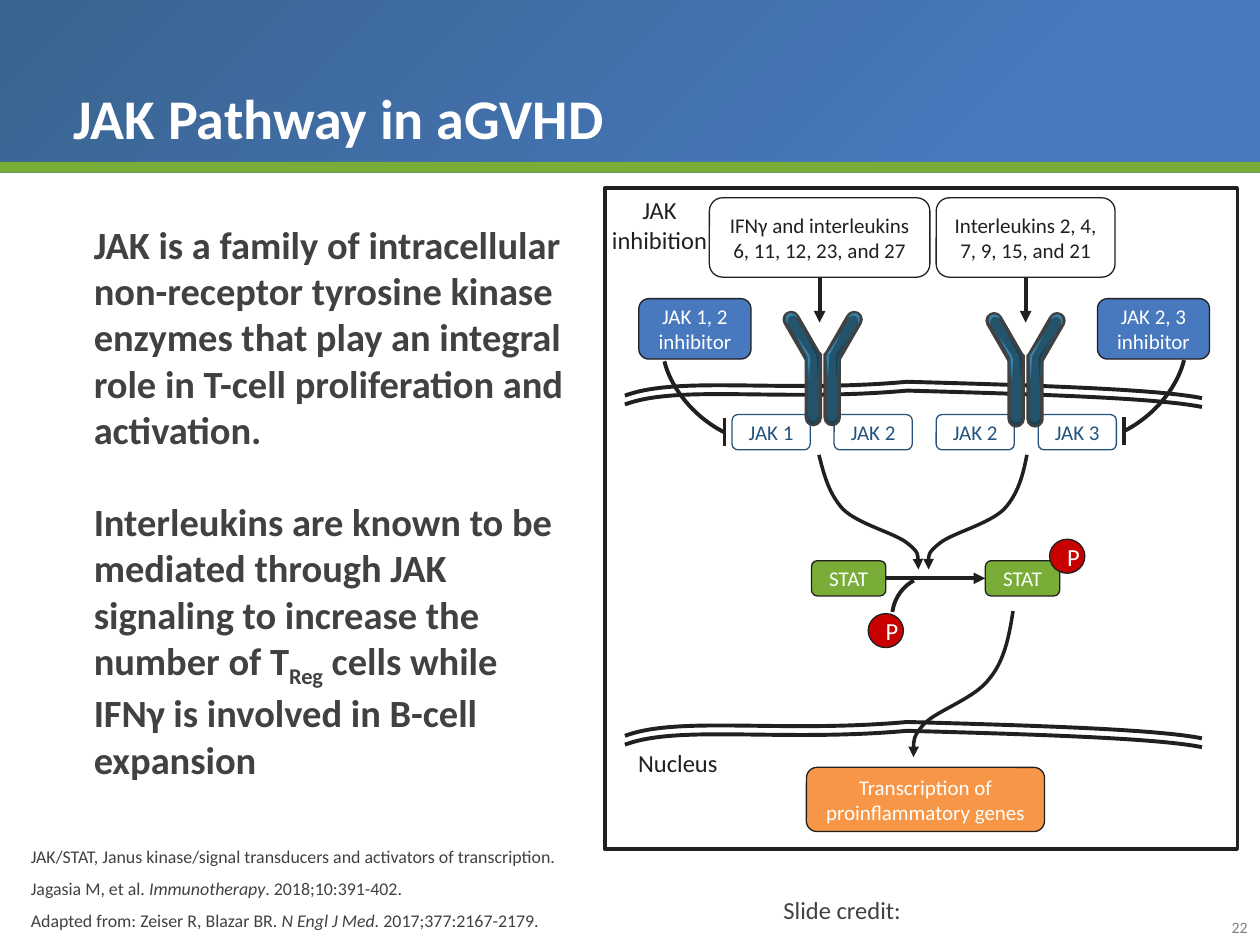
"""Build the slide on the JAK pathway in aGVHD."""
from lxml import etree
from pptx import Presentation
from pptx import util as u
from pptx.dml.color import RGBColor
from pptx.enum import shapes as s, text as t
from pptx.oxml import parse_xml
from pptx.oxml.ns import nsdecls, qn

HUES = dict(ink="202020", text="414141", white="FFFFFF", blue="4878BD", dusk="396490",
            navy="24537D", green="79AD38", orange="F79646", red="C80000", gray="7F7F7F",
            teal="24536C", light="3783AB", deep="1B4154")
K = s.MSO_SHAPE
A, P = t.MSO_ANCHOR, t.PP_ALIGN

deck = Presentation()
deck.slide_width, deck.slide_height = u.Inches(10), u.Inches(7.5)
unit = deck.slide_width // 1000
slide = deck.slides.add_slide(deck.slide_layouts[6])
art = slide.shapes


def form(host, kind, at, fill=None, line=None, width=0.75, adj=(), rot=0, flip=False):
    item = host.add_shape(kind, *(round(v * unit) for v in at))
    item.shadow.inherit = False
    item.rotation = rot
    for n, v in enumerate(adj):
        item.adjustments[n] = v
    if flip:
        item._element.spPr.find(qn("a:xfrm")).set("flipH", "1")
    for part, hue in ((item.fill, fill), (item.line.fill, line)):
        if hue:
            part.solid()
            part.fore_color.rgb = RGBColor.from_string(HUES[hue])
        else:
            part.background()
    if line:
        item.line.width = u.Pt(width)
    return item


def write(item, paras, size, hue, align=P.CENTER, anchor=A.MIDDLE, wrap=True, bold=False, **gaps):
    frame = item.text_frame
    frame.word_wrap, frame.vertical_anchor = wrap, anchor
    for n, runs in enumerate(paras):
        para = frame.add_paragraph() if n else frame.paragraphs[0]
        para.alignment = align
        for key, gap in gaps.items():
            if n or key != "space_before":
                setattr(para, key, gap)
        for word in [runs] if isinstance(runs, str) else runs:
            run = para.add_run()
            run.text, mark = word if isinstance(word, tuple) else (word, "")
            look = dict(name="Calibri", size=u.Pt(size), bold=bold, italic=mark == "italic")
            for key, v in look.items():
                setattr(run.font, key, v)
            run.font.color.rgb = RGBColor.from_string(HUES[hue])
            if mark == "sub":
                run.font._element.set("baseline", "-25000")


band = form(art, K.RECTANGLE, (0, 0, 1000, 137), "blue")
old = band._element.spPr.find(qn("a:solidFill"))
stops = "".join(f'<a:gs pos="{pos}"><a:srgbClr val="{HUES[hue]}"/></a:gs>'
                for pos, hue in ((0, "dusk"), (79000, "blue")))
old.getparent().replace(old, parse_xml(
    f'<a:gradFill {nsdecls("a")} rotWithShape="1"><a:gsLst>{stops}</a:gsLst><a:path path="circle">'
    '<a:fillToRect r="100000" b="100000"/></a:path></a:gradFill>'))
form(art, K.RECTANGLE, (0, 128.6, 1000, 8.6), "green")

left = dict(align=P.LEFT, anchor=A.TOP)
labels = [
    ((958, 723.4, 42, 25), ["22"], 9, "gray", dict(align=P.RIGHT, anchor=A.TOP)),
    ((612, 705.4, 114, 34), ["Slide credit:"], 14, "text", dict(left, wrap=False)),
    ((48.6, 10, 901, 115), ["JAK Pathway in aGVHD"], 32, "white",
     dict(align=P.LEFT, anchor=A.BOTTOM, bold=True, line_spacing=0.9)),
    ((14.6, 660, 465, 84), [
        "JAK/STAT, Janus kinase/signal transducers and activators of transcription.",
        ["Jagasia M, et al. ", ("Immunotherapy", "italic"), ". 2018;10:391-402."],
        ["Adapted from: Zeiser R, Blazar BR. ", ("N Engl J Med. ", "italic"),
         "2017;377:2167-2179."]], 10.2, "text",
     dict(align=P.LEFT, anchor=A.BOTTOM, space_after=u.Pt(6))),
    ((64.6, 170.5, 400, 454), [
        "JAK is a family of intracellular non-receptor tyrosine kinase enzymes that play "
        "an integral role in T-cell proliferation and activation.",
        ["Interleukins are known to be mediated through JAK signaling to increase the "
         "number of T", ("Reg", "sub"), " cells while IFNγ is involved in B-cell expansion"]],
     22, "text", dict(left, bold=True, space_before=u.Pt(26.5))),
    ((474.4, 150, 98, 57), ["JAK inhibition"], 14, "ink", dict(anchor=A.TOP)),
    ((496.6, 589, 84, 34), ["Nucleus"], 14, "ink", dict(left, wrap=False)),
]
for at, paras, size, hue, look in labels:
    write(art.add_textbox(*(round(v * unit) for v in at)), paras, size, hue, **look)

skin = [(496, 314), (539, 298), (620, 312), (720, 303), (828, 306), (919, 309), (954, 316)]
curves = [([(x, y + drop) for x, y in skin], 2.25, (465, 303 + drop, 510, 42))
          for drop in (0, 7, 270, 277)]
curves += [
    ([(650, 361), (654, 377), (658, 392), (669, 404), (681, 416), (710, 423), (720, 431),
      (730, 439), (729, 446), (729, 452)], 2, None),
    ([(815, 361), (812, 377), (808, 392), (797, 404), (785, 416), (756, 423), (746, 431),
      (736, 439), (736, 446), (737, 452)], 2, None),
    ([(804, 485), (801, 505), (797, 525), (785, 539), (774, 554), (744, 564), (734, 574),
      (724, 585), (725, 593), (725, 601)], 2, None)]
tips = []
for knots, width, frame in curves:
    pen = art.build_freeform(knots[0][0] * unit, knots[0][1] * unit)
    pen.add_line_segments([(x * unit, y * unit) for x, y in knots[1:]], close=False)
    curve = pen.convert_to_shape()
    trace = curve._element.spPr.find(".//" + qn("a:path"))
    legs = trace.findall(qn("a:lnTo"))
    for n in range(0, len(legs), 3):
        bow = etree.SubElement(trace, qn("a:cubicBezTo"))
        for leg in legs[n:n + 3]:
            bow.append(leg[0])
            trace.remove(leg)
    if frame:
        x, y, w, h = (v * unit for v in frame)
        for dot in trace.iter(qn("a:pt")):
            dot.set("x", str(int(dot.get("x")) + curve.left - x))
            dot.set("y", str(int(dot.get("y")) + curve.top - y))
        curve.left, curve.top, curve.width, curve.height = x, y, w, h
        trace.set("w", str(w))
        trace.set("h", str(h))
    else:
        tips.append(curve)
    curve.shadow.inherit = False
    curve.fill.background()
    curve.line.color.rgb = RGBColor.from_string(HUES["ink"])
    curve.line.width = u.Pt(width)

boxes = [
    ((507, 237, 89, 48), ["JAK 1, 2", "inhibitor"], "blue", "ink", "white"),
    ((871, 237, 89, 48), ["JAK 2, 3", "inhibitor"], "blue", "ink", "white"),
    ((743, 157, 142, 63), ["Interleukins 2, 4, 7, 9, 15, and 21"], "white", "ink", "ink"),
    ((563, 157, 175, 63), ["IFNγ and interleukins 6, 11, 12, 23, and 27"], "white", "ink", "ink"),
    ((644, 445, 59, 28), ["STAT"], "green", "ink", "white"),
    ((782, 445, 59, 28), ["STAT"], "green", "ink", "white"),
    ((640, 609, 189, 51), ["Transcription of proinflammatory genes"], "orange", "ink", "white")]
boxes += [((581 + 81 * n, 329, 62, 28), [f"JAK {kind}"], "white", "navy", "navy")
          for n, kind in enumerate((1, 2, 2, 3))]
made = []
for at, paras, fill, line, hue in boxes:
    made.append(form(art, K.ROUNDED_RECTANGLE, at, fill, line))
    write(made[-1], paras, 12, hue)
for x, y in ((833, 428), (689, 487)):
    write(form(art, K.OVAL, (x, y, 28, 27), "red", "ink"), ["P"], 14, "white")

cap, tri = K.ROUND_2_SAME_RECTANGLE, K.ISOSCELES_TRIANGLE
limb = [
    (cap, (640, 281, 11, 56), 0, "teal", (0, 0.5)),
    (cap, (630, 246, 11, 41), 330, "teal", (0.5, 0)),
    (K.MOON, (624, 247, 7, 10), 60, "light", (0.318,)),
    (K.RECTANGLE, (640, 281, 10, 16), 0, "teal", ()),
    (K.MOON, (642, 328, 7, 10), 270, "deep", (0.318,)),
    (tri, (636, 265, 2, 19), 329.4, "light", ()),
    (tri, (641, 283, 2, 19), 180, "light", ()),
    (tri, (643, 264, 2, 19), 329.4, "deep", ()),
    (tri, (648, 282, 2, 19), 180, "deep", ())]
swap = dict(light="deep", deep="light")
for dx, dy in ((0, 0), (161, 1)):
    group = art.add_group_shape().shapes
    for flip in (False, True):
        for kind, (x, y, w, h), rot, fill, adj in limb:
            if flip:
                x, rot = 2 * 653 - x - w, -rot % 360
                fill = swap.get(fill, fill) if kind == tri else fill
            form(group, kind, (x + dx, y + dy, w, h), fill,
                 "text" if kind == cap else None, 2, adj, rot, flip)

bend = (181.921, 20.231)
for at, adj, rot, flip in (((539, 230, 87, 132), bend, 312.6, True),
                           ((841, 229, 87, 132), bend, 47.4, False),
                           ((709, 456, 57, 62), (198.775, 20.231), 36.4, True)):
    form(art, K.ARC, at, None, "ink", 2.25, adj, rot, flip)

wires = [((650.5, 220, 650.5, 256), made[3], 2, None), ((814, 220, 814, 256), made[2], 2, None),
         ((703, 459, 782, 459), made[4], 3, made[5]),
         ((575, 332, 575, 354), None, 0, None), ((892, 331, 892, 353), None, 0, None)]
for ends, start, side, goal in wires:
    wire = art.add_connector(s.MSO_CONNECTOR.STRAIGHT, *(round(v * unit) for v in ends))
    if start:
        wire.begin_connect(start, side)
        tips.append(wire)
    if goal:
        wire.end_connect(goal, 1)
    wire.line.color.rgb = RGBColor.from_string(HUES["ink"])
    wire.line.width = u.Pt(2.25)
    etree.SubElement(wire._element.spPr, qn("a:effectLst"))
for item in tips:
    etree.SubElement(item.line._get_or_add_ln(), qn("a:tailEnd"), type="triangle")

form(art, K.RECTANGLE, (480, 149, 502, 525), None, "ink", 2)
deck.save("out.pptx")
